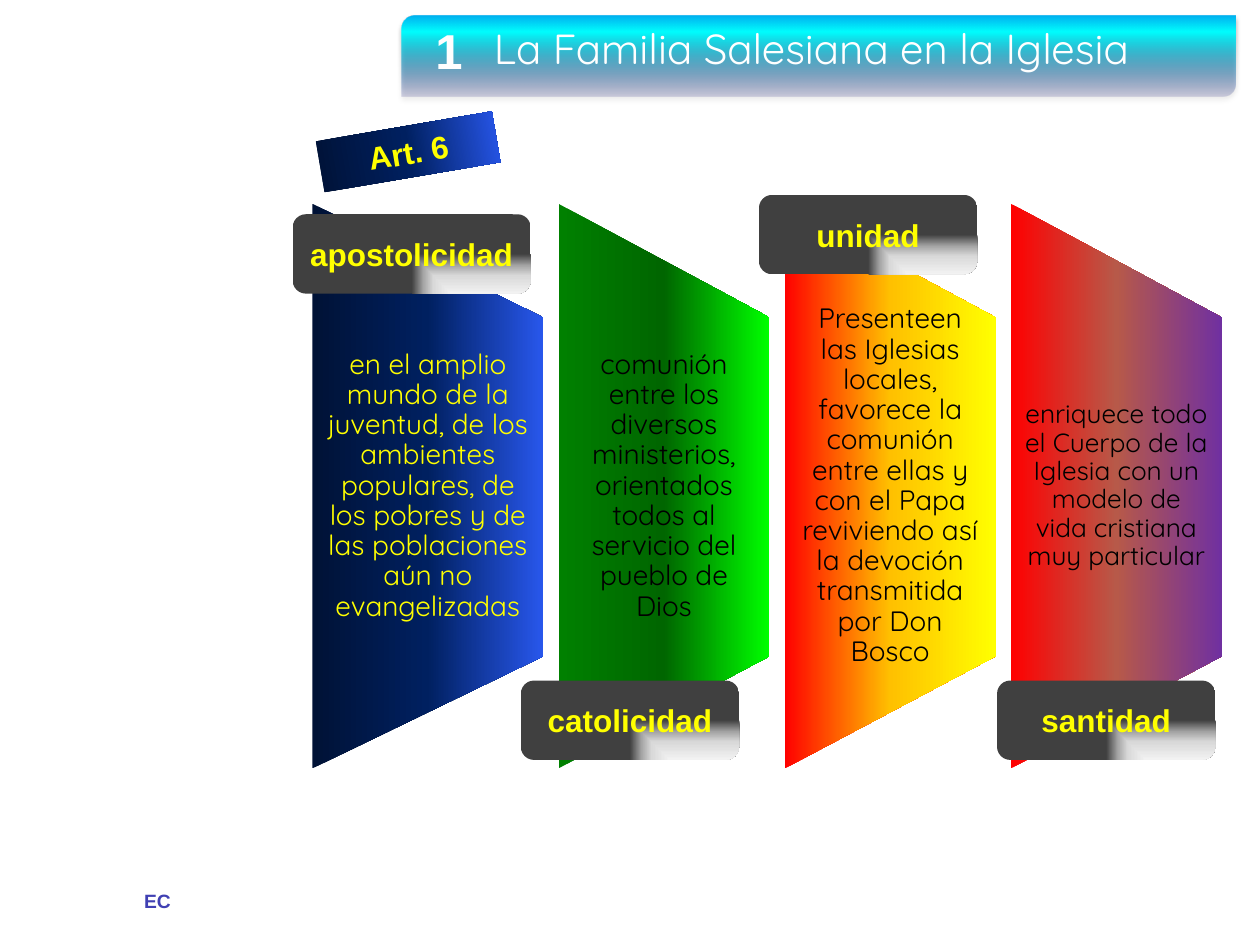
from lxml.etree import SubElement
from pptx import Presentation
from pptx.dml.color import RGBColor
from pptx.enum.shapes import MSO_SHAPE
from pptx.enum.text import MSO_ANCHOR, PP_ALIGN
from pptx.oxml import parse_xml
from pptx.oxml.ns import nsdecls, qn
from pptx.util import Cm, Pt

COLORS = {
    "white": "FFFFFF", "black": "000000", "yellow": "FFFF00", "footer": "4040B3",
    "number": "FEFEFE", "number_edge": "202086",
}
BLUES = [(0, "001236"), (50, "002060"), (100, "2857EC")]
GREENS = [(0, "008000"), (50, "006600"), (100, "00FF00")]
FLAMES = [(0, "FF0000"), (50, "FFC000"), (100, "FFFF00")]
PURPLES = [(0, "FF0000"), (50, "B75949"), (100, "7030A0")]
GREYS = [(0, "F2F2F2"), (45, "D9D9D9"), (70, "A6A6A6"), (100, "404040")]
SKY = [(0, "00B0F0"), (20, "00FFFF"), (100, "1B1B7E")]
LINEAR = '<a:lin ang="0" scaled="0"/>'
DOWNWARD = '<a:lin ang="5400000" scaled="0"/>'
FROM_CORNER = '<a:path path="rect"><a:fillToRect l="100000" t="100000"/></a:path>'
SHADOW = (f'<a:effectLst {nsdecls("a")}><a:outerShdw blurRad="%d" dist="%d" dir="%d" '
          'algn="tl" rotWithShape="0"><a:srgbClr val="000000"><a:alpha val="%d"/>'
          '</a:srgbClr></a:outerShdw></a:effectLst>')


def paint(shape, stops, direction=LINEAR):
    """Fill a shape with a gradient, without line or shadow."""
    shape.shadow.inherit = False
    shape.line.fill.background()
    shape.fill.background()
    marks = "".join(f'<a:gs pos="{pos * 1000}"><a:srgbClr val="{color}"/></a:gs>'
                    for pos, color in stops)
    gradient = parse_xml(f'<a:gradFill {nsdecls("a")} rotWithShape="1">'
                         f'<a:gsLst>{marks}</a:gsLst>{direction}</a:gradFill>')
    properties = shape._element.spPr
    properties.replace(properties.find(qn("a:noFill")), gradient)


def write(shape, text, size, color, font="Arial", align=PP_ALIGN.CENTER,
          edge=None, edge_width=0.75, shadow=False):
    """Put one formatted paragraph into a shape."""
    frame = shape.text_frame
    frame.text = text
    frame.word_wrap = True
    frame.vertical_anchor = MSO_ANCHOR.MIDDLE
    paragraph = frame.paragraphs[0]
    paragraph.alignment = align
    run = paragraph.runs[0]
    run.font.size = Pt(size)
    run.font.name = font
    run.font.bold = font == "Arial"
    run.font.color.rgb = RGBColor.from_string(COLORS[color])
    properties = run.font._element
    if shadow:
        properties.find(qn("a:solidFill")).addnext(
            parse_xml(SHADOW % (Pt(3), Pt(3), 2700000, 60000)))
    if edge:
        properties.insert(0, parse_xml(
            f'<a:ln {nsdecls("a")} w="{Pt(edge_width)}"><a:solidFill>'
            f'<a:srgbClr val="{COLORS[edge]}"/></a:solidFill></a:ln>'))
    return paragraph


deck = Presentation()
deck.slide_width, deck.slide_height = Cm(25.4), Cm(19.05)
slide = deck.slides.add_slide(deck.slide_layouts[5])
shapes = slide.shapes

# Banner, placed behind the title
banner = shapes.add_shape(MSO_SHAPE.ROUND_2_DIAG_RECTANGLE,
                          Cm(8.1), Cm(0.32), Cm(16.8), Cm(1.62))
paint(banner, SKY, DOWNWARD)
last_color = banner._element.spPr.findall(".//" + qn("a:srgbClr"))[-1]
SubElement(last_color, qn("a:alpha"), val="16000")
banner._element.spPr.replace(banner._element.spPr.find(qn("a:effectLst")),
                             parse_xml(SHADOW % (Pt(3.1), Pt(1.8), 5400000, 35000)))
shapes._spTree.insert(2, banner._element)

title = shapes.title
title.left, title.top, title.width, title.height = Cm(9.7), Cm(0.33), Cm(14.8), Cm(1.27)
write(title, "La Familia Salesiana en la Iglesia", 24, "white", "Quicksand",
      PP_ALIGN.LEFT, shadow=True)

number = shapes.add_textbox(Cm(8.5), Cm(0.28), Cm(1.1), Cm(1.45))
number_line = write(number, "1", 28, "number", edge="number_edge", edge_width=1, shadow=True)
number_line.runs[0].font._element.set("spc", "50")

# Four columns, each narrowing to the right
columns = [
    (4.65, BLUES, "yellow", 16, "en el amplio mundo de la juventud, de los ambientes "
     "populares, de los pobres y de las poblaciones aún no evangelizadas"),
    (4.25, GREENS, "black", 16, "comunión entre los diversos ministerios, orientados "
     "todos al servicio del pueblo de Dios"),
    (4.25, FLAMES, "black", 16, "Presenteen las Iglesias locales, favorece la comunión "
     "entre ellas y con el Papa reviviendo así la devoción transmitida por Don Bosco"),
    (4.25, PURPLES, "black", 15, "enriquece todo el Cuerpo de la Iglesia con un modelo "
     "de vida cristiana muy particular"),
]
left, gap = 6.3, 0.31
for width, stops, color, size, text in columns:
    right = left + width
    outline = shapes.build_freeform(Cm(left), Cm(15.49))
    outline.add_line_segments([(Cm(left), Cm(4.11)), (Cm(right), Cm(6.4)),
                               (Cm(right), Cm(13.23))])
    column = outline.convert_to_shape()
    paint(column, stops)
    paragraph = write(column, text, size, color, "Quicksand")
    paragraph.line_spacing = 0.9
    frame = column.text_frame
    frame.margin_left = frame.margin_right = Cm(0.018 * size)
    frame.margin_top = frame.margin_bottom = Cm(2.29)
    left = right + gap

# Tilted article tag
article = shapes.add_shape(MSO_SHAPE.RECTANGLE, Cm(6.43), Cm(2.54), Cm(3.6), Cm(1.04))
article.rotation = 350.3
paint(article, BLUES)
write(article, "Art. 6", 18, "yellow")

# Name tags on the columns
for name, tag_left, tag_top, tag_width in [
    ("apostolicidad", 5.9, 4.32, 4.8),
    ("catolicidad", 10.5, 13.72, 4.4),
    ("unidad", 15.3, 3.93, 4.4),
    ("santidad", 20.1, 13.72, 4.4),
]:
    tag = shapes.add_shape(MSO_SHAPE.ROUNDED_RECTANGLE,
                           Cm(tag_left), Cm(tag_top), Cm(tag_width), Cm(1.6))
    paint(tag, GREYS, FROM_CORNER)
    write(tag, name, 18, "yellow", edge="black")

# Footer initials
initials = shapes.add_textbox(Cm(2.64), Cm(17.8), Cm(1.07), Cm(0.73))
write(initials, "EC", 11, "footer")
initials.text_frame.word_wrap = False

deck.save("out.pptx")
